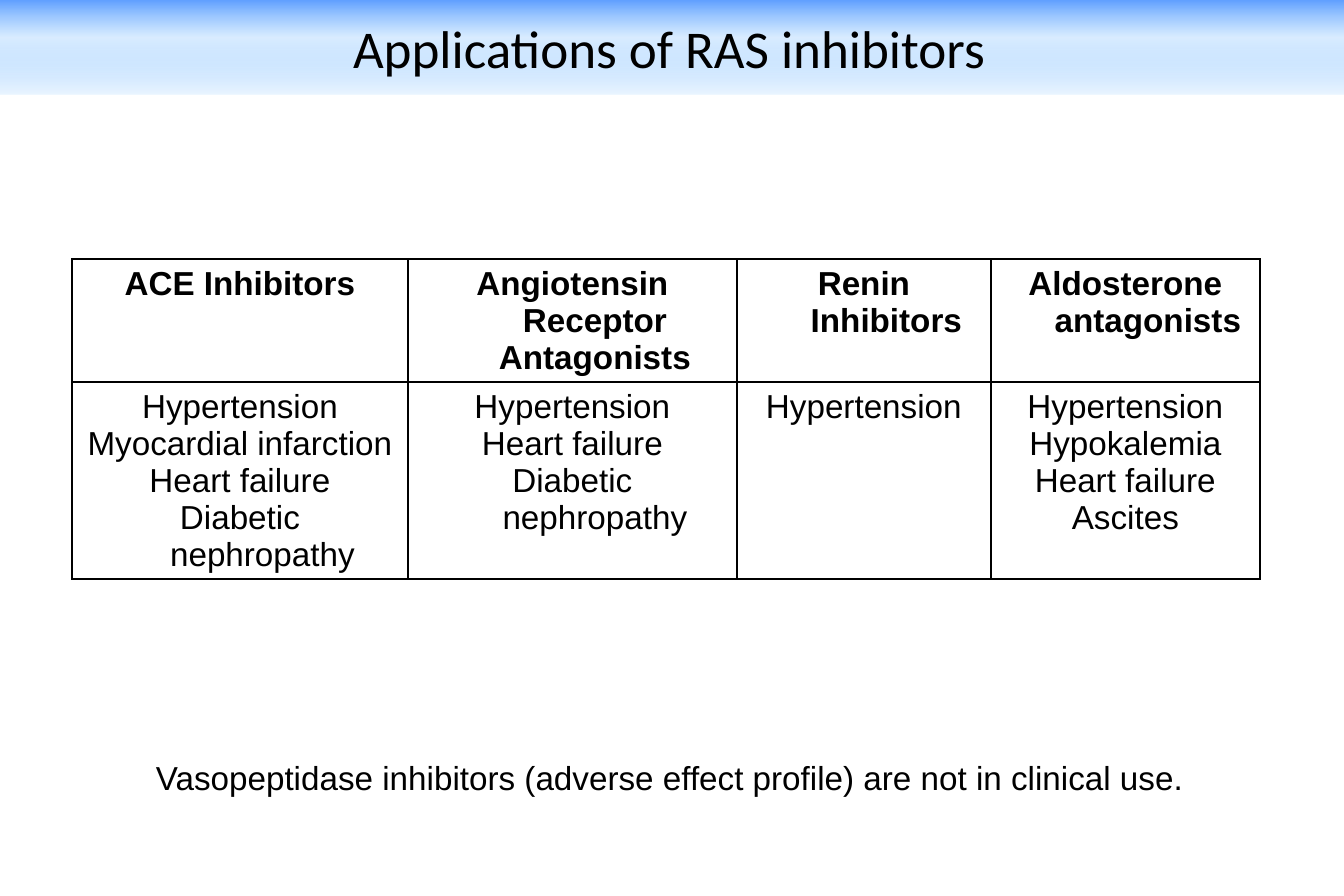
from lxml import etree
from pptx import Presentation
from pptx import util as u
from pptx.dml.color import RGBColor
from pptx.enum import text
from pptx.oxml import parse_xml
from pptx.oxml.ns import nsdecls, qn

TITLE = "Applications of RAS inhibitors"
DRUG_USES = {
    "ACE Inhibitors": ["Hypertension", "Myocardial infarction", "Heart failure",
                       "Diabetic nephropathy"],
    "Angiotensin Receptor Antagonists": ["Hypertension", "Heart failure",
                                         "Diabetic nephropathy"],
    "Renin Inhibitors": ["Hypertension"],
    "Aldosterone antagonists": ["Hypertension", "Hypokalemia", "Heart failure",
                                "Ascites"],
}
NOTE = "Vasopeptidase inhibitors (adverse effect profile) are not in clinical use."

COLORS = {"ink": "000000", "paper": "FFFFFF",
          "band_top": "5E9EFF", "band_mid": "85C2FF", "band_end": "EBF5FF"}
# position %, colour, opacity %
BAND_STOPS = [(0, "band_top", 100), (40, "band_mid", 31), (100, "band_end", 100)]

# lengths in px
SLIDE = (1344, 896)
TITLE_BOX = (-5, 0, 1349, 94)
TABLE_AT = (72, 259)
COL_WIDTHS = [336, 329, 254, 269]
ROW_HEIGHTS = [70, 190]
NOTE_BOX = (74, 751, 1192, 53)
HANGING = 45
EMU_PER_PX = 7654


def px(n):
    return u.Emu(n * EMU_PER_PX)


def rgb(name):
    return RGBColor.from_string(COLORS[name])


def write(tf, lines, font, size, bold=False):
    tf.text = "\n".join(lines)
    for p in tf.paragraphs:
        p.alignment = text.PP_ALIGN.CENTER
        for r in p.runs:
            r.font.name = font
            r.font.size = u.Pt(size)
            r.font.bold = bold
            r.font.color.rgb = rgb("ink")


def fill_band(sp):
    """Fill from top to bottom with the partly transparent band gradient."""
    stops = "".join(
        f'<a:gs pos="{pos * 1000}"><a:srgbClr val="{COLORS[name]}">'
        f'<a:alpha val="{alpha * 1000}"/></a:srgbClr></a:gs>'
        for pos, name, alpha in BAND_STOPS)
    sp.fill.gradient()
    old = sp.element.spPr.find(qn("a:gradFill"))
    old.getparent().replace(old, parse_xml(
        f'<a:gradFill {nsdecls("a")} rotWithShape="1"><a:gsLst>{stops}</a:gsLst>'
        '<a:lin ang="5400000" scaled="0"/></a:gradFill>'))


def add_borders(cell):
    tcPr = cell._tc.get_or_add_tcPr()
    for i, side in enumerate(("lnL", "lnR", "lnT", "lnB")):
        ln = etree.Element(qn(f"a:{side}"), w=str(u.Pt(1)))
        fill = etree.SubElement(ln, qn("a:solidFill"))
        etree.SubElement(fill, qn("a:srgbClr"), val=COLORS["ink"])
        tcPr.insert(i, ln)


def fill_cell(cell, lines, bold):
    write(cell.text_frame, lines, "Arial", 20, bold)
    for p in cell.text_frame.paragraphs:
        pPr = p._p.get_or_add_pPr()
        pPr.set("marL", str(px(HANGING)))
        pPr.set("indent", str(-px(HANGING)))
    cell.fill.solid()
    cell.fill.fore_color.rgb = rgb("paper")
    add_borders(cell)


def main():
    prs = Presentation()
    prs.slide_width, prs.slide_height = map(px, SLIDE)
    slide = prs.slides.add_slide(prs.slide_layouts[5])

    title = slide.shapes.title
    title.left, title.top, title.width, title.height = map(px, TITLE_BOX)
    fill_band(title)
    write(title.text_frame, [TITLE], "Calibri", 32)
    title.text_frame.vertical_anchor = text.MSO_ANCHOR.MIDDLE

    table = slide.shapes.add_table(
        len(ROW_HEIGHTS), len(COL_WIDTHS), *map(px, TABLE_AT),
        px(sum(COL_WIDTHS)), px(sum(ROW_HEIGHTS))).table
    table.first_row = table.horz_banding = False
    for col, width in zip(table.columns, COL_WIDTHS):
        col.width = px(width)
    for row, height in zip(table.rows, ROW_HEIGHTS):
        row.height = px(height)
    for c, (drug, uses) in enumerate(DRUG_USES.items()):
        fill_cell(table.cell(0, c), [drug], bold=True)
        fill_cell(table.cell(1, c), uses, bold=False)

    note = slide.shapes.add_textbox(*map(px, NOTE_BOX)).text_frame
    note.word_wrap = True
    note.auto_size = text.MSO_AUTO_SIZE.SHAPE_TO_FIT_TEXT
    write(note, [NOTE], "Arial", 20)

    prs.save("out.pptx")


if __name__ == "__main__":
    main()
